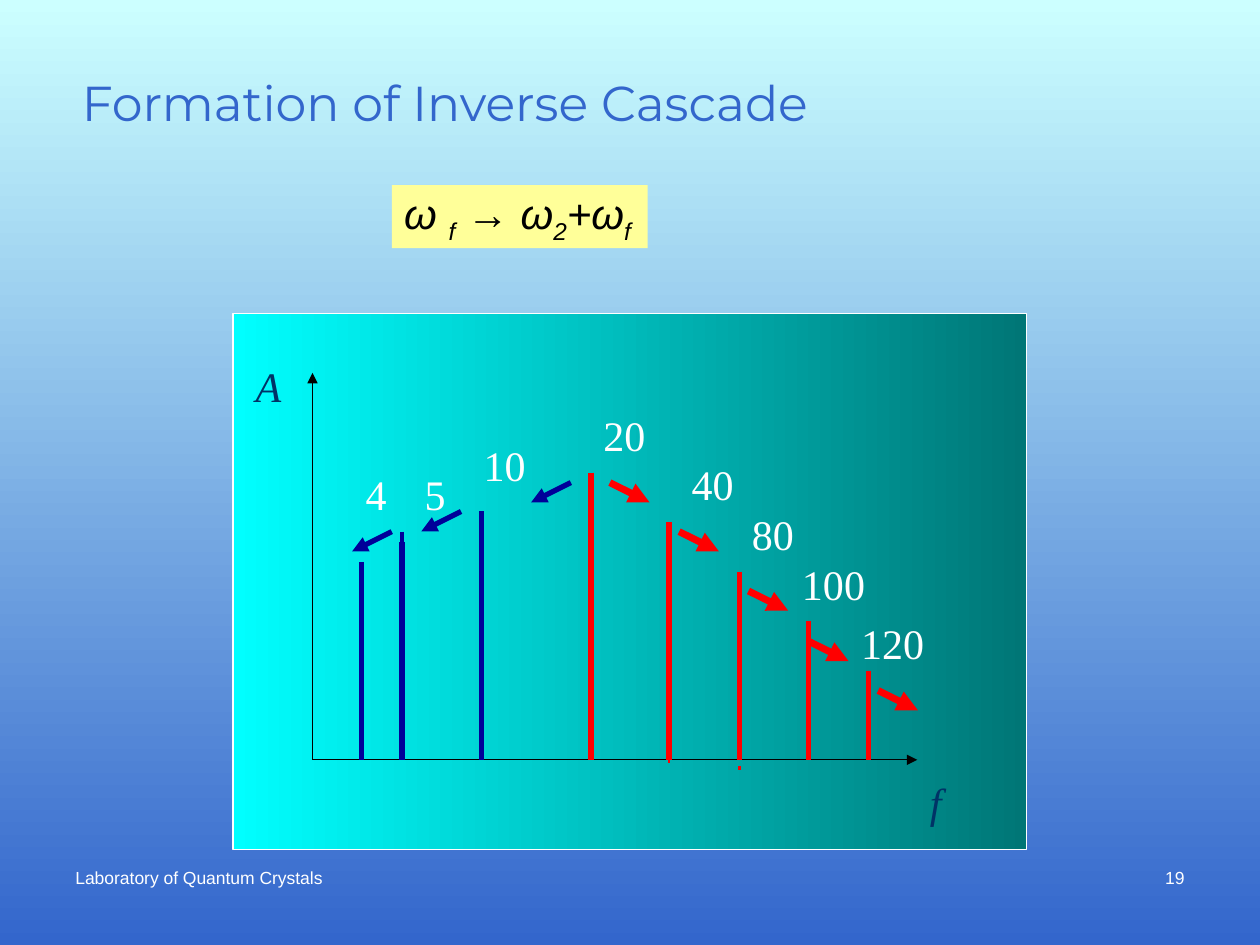
"""Build the slide on the formation of the inverse cascade."""
from lxml import etree
from pptx import Presentation
from pptx.dml.color import RGBColor
from pptx.enum.dml import MSO_LINE
from pptx.enum.shapes import MSO_CONNECTOR, MSO_SHAPE
from pptx.enum.text import MSO_ANCHOR, PP_ALIGN
from pptx.oxml.ns import qn
from pptx.util import Pt

STRAIGHT = MSO_CONNECTOR.STRAIGHT
RECTANGLE = MSO_SHAPE.RECTANGLE
DASH = MSO_LINE.DASH
MIDDLE = MSO_ANCHOR.MIDDLE
LEFT, CENTER, RIGHT = PP_ALIGN.LEFT, PP_ALIGN.CENTER, PP_ALIGN.RIGHT

PALE_CYAN = RGBColor(0xCC, 0xFF, 0xFF)
BLUE = RGBColor(0x33, 0x66, 0xCC)
CYAN = RGBColor(0x00, 0xFF, 0xFF)
TEAL = RGBColor(0x00, 0x76, 0x76)
NAVY = RGBColor(0x00, 0x33, 0x66)
DEEP_BLUE = RGBColor(0x00, 0x00, 0x99)
RED = RGBColor(0xFF, 0x00, 0x00)
YELLOW = RGBColor(0xFF, 0xFF, 0x99)
WHITE = RGBColor(0xFF, 0xFF, 0xFF)
BLACK = RGBColor(0x00, 0x00, 0x00)

SERIF = "Times New Roman"
SANS = "Arial"
ORIGIN_X, BASE_Y = 178.6, 434.2
LABEL_HEIGHT = 36
ARROW_RUN, ARROW_DROP = 22.7, 11.3
PEAK_Y, PEAK_STEP = 270, 28.3

RED_BARS = (337.7, 382.3, 422.6, 462.2, 496.1)
RED_DASHES = ((422.6, 332.6, 439.9), (462.2, 355, BASE_Y),
              (382.3, 303.8, 439.9), (496.1, 383.2, BASE_Y))
BLUE_BARS = ((275, 292.3), (229.7, 309.6), (206.6, 321.1))
BLUE_DASHES = ((275, 292.3), (229.7, 303.8), (206.6, 326.9))
RED_ARROWS = ((348.5, 275.8), (388.1, 303.8), (427.7, 337.7),
              (462.2, 366.5), (501.8, 394.6))
BLUE_ARROWS = ((326.2, 275.8), (263.5, 292.3), (223.9, 303.8))
FREQUENCIES = (("20", 337.7, 230.4, 38.2), ("40", 388.1, 258.5, 38.2),
               ("80", 422.6, 287.3, 38.2), ("100", 445, 315.4, 62.6),
               ("120", 478.8, 349.2, 62.6), ("10", 269.3, 247.7, 38.2),
               ("4", 201.6, 264.2, 26.6), ("5", 235.4, 264.2, 26.6))
EQUATION = (("ω ", False), ("f", True), (" → ω", False),
            ("2", True), ("+ω", False), ("f", True))


def set_gradient(fill, start, end, angle):
    """Fill with a linear gradient between two colours."""
    fill.gradient()
    fill.gradient_angle = angle
    for stop, color in zip(fill.gradient_stops, (start, end)):
        stop.color.rgb = color


def format_paragraph(para, font, size, color, align=LEFT, italic=False):
    """Set the font and alignment of a paragraph."""
    para.alignment = align
    para.font.name = font
    para.font.size = Pt(size)
    para.font.color.rgb = color
    para.font.italic = italic
    para.font.bold = False


def add_label(slide, text, place, font, size, color, align, italic=False):
    """Add a one-line text box."""
    box = slide.shapes.add_textbox(*map(Pt, place))
    box.text_frame.word_wrap = False
    para = box.text_frame.paragraphs[0]
    para.text = text
    format_paragraph(para, font, size, color, align, italic)


def add_line(slide, start, end, color, width, dash=None, arrow=False):
    """Add a straight line, optionally dashed or ending in an arrowhead."""
    connector = slide.shapes.add_connector(STRAIGHT, *map(Pt, start + end))
    line = connector.line
    line.color.rgb = color
    line.width = Pt(width)
    if dash:
        line.dash_style = dash
    properties = connector._element.spPr
    if arrow:
        etree.SubElement(properties.find(qn("a:ln")), qn("a:tailEnd"), type="triangle")
    etree.SubElement(properties, qn("a:effectLst"))


def add_rectangle(slide, place):
    """Add a rectangle without shadow."""
    shape = slide.shapes.add_shape(RECTANGLE, *map(Pt, place))
    shape.shadow.inherit = False
    return shape


def add_title(slide, text):
    """Place and format the title."""
    title = slide.shapes.title
    title.left, title.top, title.width, title.height = map(Pt, (39.6, 26, 680.4, 64.8))
    title.text_frame.vertical_anchor = MIDDLE
    para = title.text_frame.paragraphs[0]
    para.text = text
    format_paragraph(para, "Montserrat", 28, BLUE)


def add_panel(slide):
    """Add the chart panel with its axes and axis names."""
    panel = add_rectangle(slide, (133.2, 179.3, 453.6, 306))
    set_gradient(panel.fill, CYAN, TEAL, 0)
    panel.line.color.rgb = WHITE
    panel.line.width = Pt(0.75)
    for end in ((ORIGIN_X, 213.1), (524.2, BASE_Y)):
        add_line(slide, (ORIGIN_X, BASE_Y), end, BLACK, 0.75, arrow=True)
    for name, left, top, width in (("A", 139, 202.3, 28.8), ("f", 524.2, 439.9, 20.9)):
        add_label(slide, name, (left, top, width, LABEL_HEIGHT),
                  SERIF, 24, NAVY, CENTER, True)


def add_spectrum(slide):
    """Add the spectral bars, the cascade arrows and the frequencies."""
    for index, x in enumerate(RED_BARS):
        add_line(slide, (x, PEAK_Y + index * PEAK_STEP), (x, BASE_Y), RED, 3)
    for x, top, bottom in RED_DASHES:
        add_line(slide, (x, top), (x, bottom), RED, 1.5, DASH)
    for x, top in BLUE_DASHES:
        add_line(slide, (x, top), (x, BASE_Y), DEEP_BLUE, 2, DASH)
    for x, top in BLUE_BARS:
        add_line(slide, (x, top), (x, BASE_Y), DEEP_BLUE, 3)
    for starts, run, color, width in ((RED_ARROWS, ARROW_RUN, RED, 4),
                                      (BLUE_ARROWS, -ARROW_RUN, DEEP_BLUE, 3)):
        for x, y in starts:
            add_line(slide, (x, y), (x + run, y + ARROW_DROP), color, width, arrow=True)
    for text, left, top, width in FREQUENCIES:
        add_label(slide, text, (left, top, width, LABEL_HEIGHT),
                  SERIF, 24, WHITE, CENTER)


def add_equation(slide):
    """Add the frequency relation with its subscripts."""
    box = add_rectangle(slide, (223.9, 105.8, 146.2, 36))
    box.fill.solid()
    box.fill.fore_color.rgb = YELLOW
    box.line.fill.background()
    box.text_frame.word_wrap = False
    para = box.text_frame.paragraphs[0]
    for text, subscript in EQUATION:
        span = para.add_run()
        span.text = text
        if subscript:
            span._r.get_or_add_rPr().set("baseline", "-25000")
    format_paragraph(para, SANS, 24, BLACK, italic=True)


def main():
    """Build and save the deck."""
    deck = Presentation()
    deck.slide_width, deck.slide_height = Pt(720), Pt(540)
    slide = deck.slides.add_slide(deck.slide_layouts[5])
    set_gradient(slide.background.fill, PALE_CYAN, BLUE, 270)
    for text, left, align in (("Laboratory of Quantum Crystals", 36, LEFT),
                              ("19", 516.2, RIGHT)):
        add_label(slide, text, (left, 491.8, 167.8, 37.4), SANS, 10, WHITE, align)
    add_title(slide, "Formation of Inverse Cascade")
    add_panel(slide)
    add_spectrum(slide)
    add_equation(slide)
    deck.save("out.pptx")


if __name__ == "__main__":
    main()
